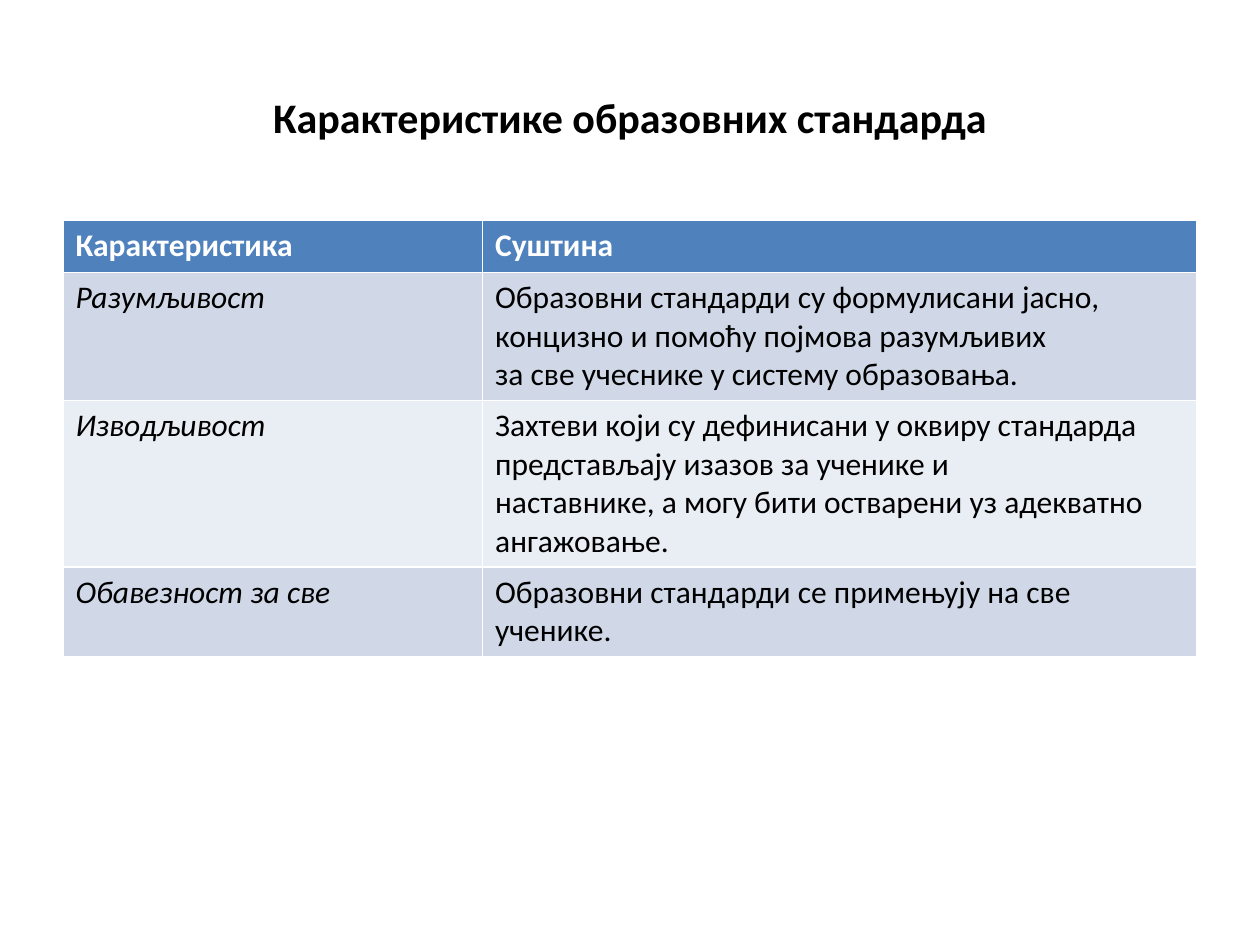
from dataclasses import dataclass

from pptx import Presentation
from pptx.dml.color import RGBColor as Rgb
from pptx.enum.text import MSO_ANCHOR as Anchor, PP_ALIGN as Align
from pptx.util import Inches, Pt


@dataclass(frozen=True)
class Theme:
    """Colours and type of the slide."""
    font: str = "Calibri"
    title_size: int = 24
    table_size: int = 18
    ink: str = "000000"
    paper: str = "FFFFFF"
    header: str = "4F81BD"
    bands: tuple = ("D0D8E8", "E9EDF4")


THEME = Theme()
WIDTH, HEIGHT = Inches(10), Inches(7.5)
TITLE = "Карактеристике образовних стандарда"
HEADINGS = ("Карактеристика", "Суштина")
STANDARDS = (
    ("Разумљивост",
     "Образовни стандарди су формулисани јасно, концизно и помоћу појмова разумљивих\n"
     "за све учеснике у систему образовања."),
    ("Изводљивост",
     "Захтеви који су дефинисани у оквиру стандарда представљају изазов за ученике и\n"
     "наставникe, а могу бити остварени уз адекватно ангажовање."),
    ("Обавезност за све", "Образовни стандарди се примењују на све ученике."),
)


def share_box(left, top, width, height):
    """Turn shares of the slide's size into a box of lengths."""
    return tuple(int(share * side) for share, side in
                 zip((left, top, width, height), (WIDTH, HEIGHT) * 2))


def write(frame, text, size, colour, bold=False, italic=False):
    """Fill a text frame, one paragraph a line, in the given format."""
    frame.text = text
    font_format = {"name": THEME.font, "size": Pt(size), "bold": bold, "italic": italic}
    for paragraph in frame.paragraphs:
        for run in paragraph.runs:
            for attribute, value in font_format.items():
                setattr(run.font, attribute, value)
            run.font.color.rgb = Rgb.from_string(colour)


def place_title(slide, box):
    """Place the centred heading in the title placeholder."""
    title = slide.shapes.title
    for side, length in zip(("left", "top", "width", "height"), box):
        setattr(title, side, length)
    write(title.text_frame, TITLE, THEME.title_size, THEME.ink, bold=True)
    title.text_frame.vertical_anchor = Anchor.MIDDLE
    title.text_frame.paragraphs[0].alignment = Align.CENTER


def place_standards(slide, box):
    """Place the banded table of characteristics and their essence."""
    entries = (HEADINGS, *STANDARDS)
    table = slide.shapes.add_table(len(entries), len(HEADINGS), *box).table
    table.columns[0].width = int(box[2] * 0.37)
    table.columns[1].width = box[2] - table.columns[0].width
    for row, entry in enumerate(entries):
        heading = row == 0
        fill = THEME.header if heading else THEME.bands[(row - 1) % 2]
        for column, text in enumerate(entry):
            cell = table.cell(row, column)
            cell.fill.solid()
            cell.fill.fore_color.rgb = Rgb.from_string(fill)
            write(cell.text_frame, text, THEME.table_size,
                  THEME.paper if heading else THEME.ink,
                  bold=heading, italic=not heading and column == 0)


def main():
    """Build and save the slide."""
    deck = Presentation()
    deck.slide_width, deck.slide_height = WIDTH, HEIGHT
    slide = deck.slides.add_slide(deck.slide_layouts.get_by_name("Title Only"))
    slide.background.fill.solid()
    slide.background.fill.fore_color.rgb = Rgb.from_string(THEME.paper)
    place_title(slide, share_box(0.05, 0.04, 0.9, 1 / 6))
    place_standards(slide, share_box(0.05, 7 / 30, 0.9, 0.22))
    deck.save("out.pptx")


if __name__ == "__main__":
    main()
